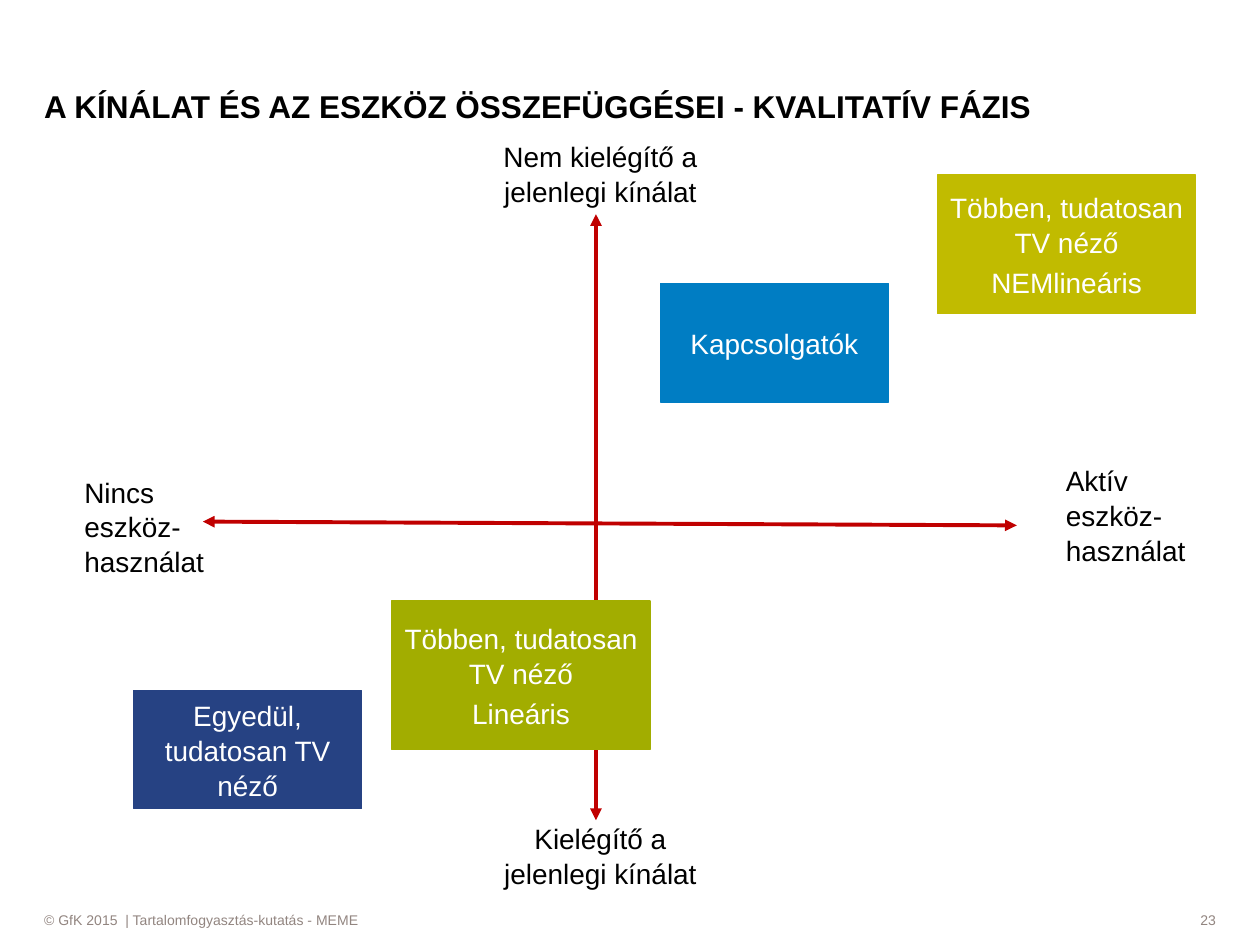
from lxml import etree
from pptx import Presentation
from pptx.dml.color import RGBColor
from pptx.enum.shapes import MSO_CONNECTOR, MSO_SHAPE
from pptx.enum.text import MSO_ANCHOR, PP_ALIGN
from pptx.oxml.ns import qn
from pptx.util import Inches, Pt

RECTANGLE = MSO_SHAPE.RECTANGLE
STRAIGHT = MSO_CONNECTOR.STRAIGHT
TOP, MIDDLE, BOTTOM = MSO_ANCHOR.TOP, MSO_ANCHOR.MIDDLE, MSO_ANCHOR.BOTTOM
LEFT, CENTER, RIGHT = PP_ALIGN.LEFT, PP_ALIGN.CENTER, PP_ALIGN.RIGHT

BLACK = RGBColor(0x00, 0x00, 0x00)
WHITE = RGBColor(0xFF, 0xFF, 0xFF)
GREY = RGBColor(0x92, 0x85, 0x80)
RED = RGBColor(0xC0, 0x00, 0x00)
NAVY = RGBColor(0x26, 0x42, 0x83)
BLUE = RGBColor(0x00, 0x7D, 0xC3)
YELLOW = RGBColor(0xC1, 0xBB, 0x00)
GREEN = RGBColor(0xA2, 0xAD, 0x00)


class SlideBuilder:
    font_name = "Arial"
    body_size = 16
    line_spacing = 1.04

    def __init__(self, page):
        self.page = page

    def style_text(self, shape, text, size, color, align=LEFT, anchor=TOP,
                   bold=False, inset=True, spacing=1.0):
        frame = shape.text_frame
        frame.text = text
        frame.word_wrap = True
        frame.vertical_anchor = anchor
        if not inset:
            frame.margin_left = frame.margin_right = 0
            frame.margin_top = frame.margin_bottom = 0
        for index, paragraph in enumerate(frame.paragraphs):
            paragraph.alignment = align
            paragraph.line_spacing = spacing
            paragraph.space_before = Pt(3 if index else 0)
            for span in paragraph.runs:
                span.font.name = self.font_name
                span.font.size = Pt(size)
                span.font.bold = bold
                span.font.color.rgb = color

    def title(self, text, left, top, width, height):
        title = self.page.shapes.title
        title.left, title.top = Inches(left), Inches(top)
        title.width, title.height = Inches(width), Inches(height)
        self.style_text(title, text, 18, BLACK, anchor=BOTTOM, bold=True, inset=False)

    def rectangle(self, left, top, width, height, fill):
        shape = self.page.shapes.add_shape(
            RECTANGLE, Inches(left), Inches(top), Inches(width), Inches(height))
        shape.shadow.inherit = False
        shape.fill.solid()
        shape.fill.fore_color.rgb = fill
        return shape

    def footer(self, text, left, width, align):
        shape = self.rectangle(left, 7.22, width, 0.16, WHITE)
        shape.line.fill.background()
        self.style_text(shape, text, 8, GREY, align, MIDDLE, inset=False)

    def segment(self, text, left, top, width, height, color):
        shape = self.rectangle(left, top, width, height, color)
        shape.line.color.rgb = color
        shape.line.width = Pt(0.75)
        self.style_text(shape, text, self.body_size, WHITE, CENTER, MIDDLE,
                        spacing=self.line_spacing)

    def label(self, text, left, top, width, align):
        box = self.page.shapes.add_textbox(
            Inches(left), Inches(top), Inches(width), Inches(1))
        self.style_text(box, text, self.body_size, BLACK, align, inset=False,
                        spacing=self.line_spacing)

    def axis(self, start_x, start_y, end_x, end_y):
        connector = self.page.shapes.add_connector(
            STRAIGHT, Inches(start_x), Inches(start_y), Inches(end_x), Inches(end_y))
        connector.line.color.rgb = RED
        connector.line.width = Pt(2.25)
        properties = connector._element.spPr
        outline = properties.find(qn("a:ln"))
        for end in ("a:headEnd", "a:tailEnd"):
            etree.SubElement(outline, qn(end), type="triangle")
        etree.SubElement(properties, qn("a:effectLst"))


def main():
    deck = Presentation()
    deck.slide_width, deck.slide_height = Inches(10), Inches(7.5)
    builder = SlideBuilder(deck.slides.add_slide(deck.slide_layouts[5]))

    builder.title("A KÍNÁLAT ÉS AZ ESZKÖZ ÖSSZEFÜGGÉSEI - KVALITATÍV FÁZIS",
                  0.35, 0.28, 7.88, 0.71)
    builder.footer("© GfK 2015  | Tartalomfogyasztás-kutatás - MEME", 0.35, 7.72, LEFT)
    builder.footer("23", 8.23, 1.42, RIGHT)

    builder.axis(1.61, 4.14, 8.07, 4.17)
    builder.axis(4.73, 1.7, 4.73, 6.51)

    for text, left, top, width, align in (
        ("Aktív eszköz-használat", 8.46, 3.67, 1.26, LEFT),
        ("Nincs eszköz-használat", 0.67, 3.76, 1.26, LEFT),
        ("Kielégítő a jelenlegi kínálat", 3.82, 6.51, 1.89, CENTER),
        ("Nem kielégítő a jelenlegi kínálat", 3.82, 1.1, 1.89, CENTER),
    ):
        builder.label(text, left, top, width, align)

    for text, left, top, width, height, color in (
        ("Egyedül, tudatosan TV néző", 1.06, 5.48, 1.81, 0.94, NAVY),
        ("Kapcsolgatók", 5.24, 2.25, 1.81, 0.94, BLUE),
        ("Többen, tudatosan TV néző\nNEMlineáris", 7.44, 1.39, 2.05, 1.1, YELLOW),
        ("Többen, tudatosan TV néző\nLineáris", 3.11, 4.77, 2.05, 1.18, GREEN),
    ):
        builder.segment(text, left, top, width, height, color)

    deck.save("out.pptx")


if __name__ == "__main__":
    main()
